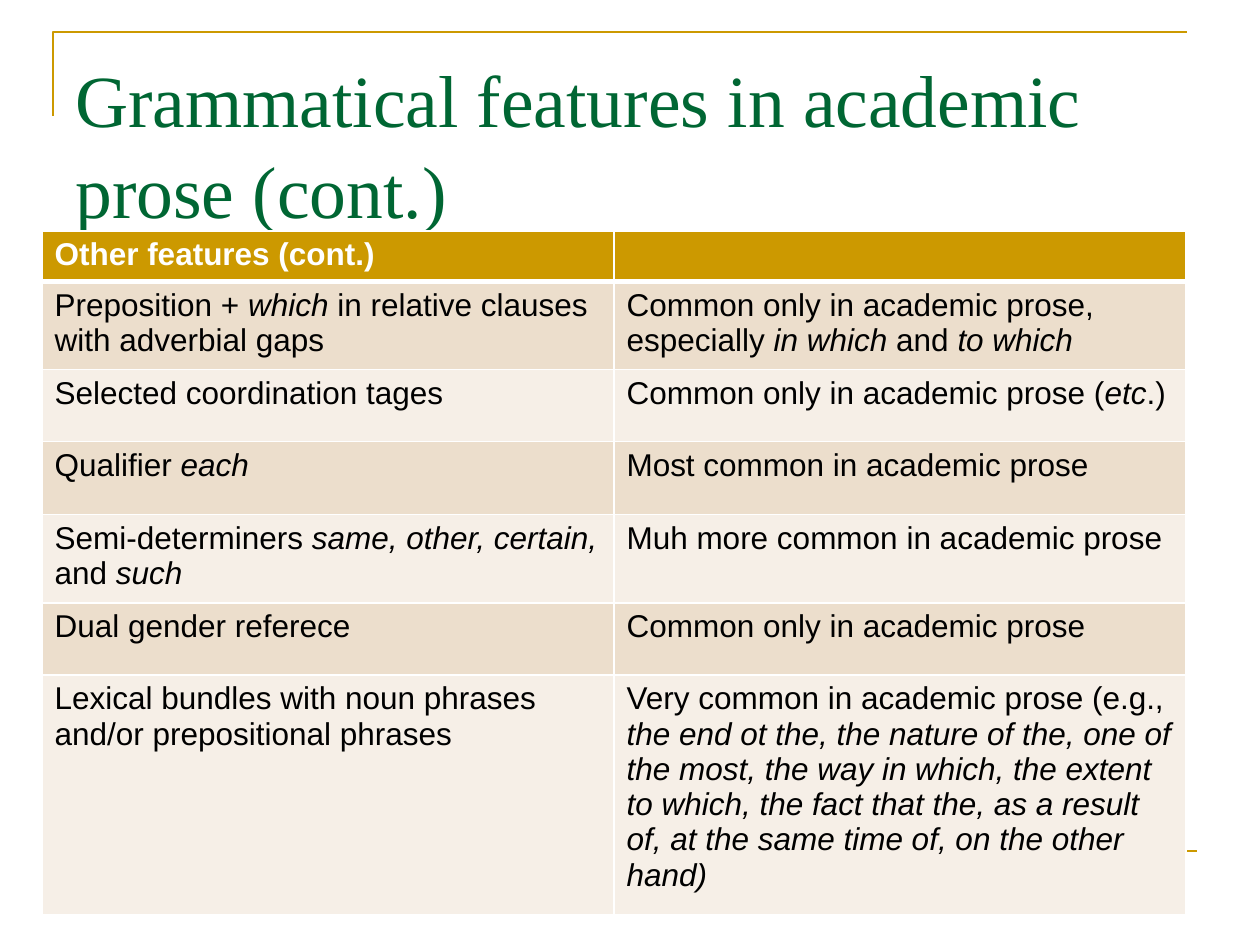
"""Build the slide on grammatical features in academic prose."""
import pptx
import pptx.util
import pptx.dml.color
import pptx.enum.shapes
import pptx.enum.text
import pptx.oxml
import pptx.oxml.ns

PX = 914400 // 126
COLORS = {"gold": "CC9900", "green": "006633", "white": "FFFFFF", "black": "000000",
          "dark_band": "ECDECC", "light_band": "F6EFE7"}
ROWS = [
    (47, "Other features (cont.)", ""),
    (83, "Preposition + *which *in relative clauses with adverbial gaps",
     "Common only in academic prose, especially *in which* and *to which*"),
    (72, "Selected coordination tages", "Common only in academic prose (*etc*.)"),
    (73, "Qualifier *each*", "Most common in academic prose"),
    (83, "Semi-determiners *same, other, certain,* and *such*",
     "Muh more common in academic prose"),
    (72, "Dual gender referece", "Common only in academic prose"),
    (224, "Lexical bundles with noun phrases and/or prepositional phrases",
     "Very common in academic prose (e.g., *the end ot the, the nature of the, one of the most, "
     "the way in which, the extent to which, the fact that the, as a result of, "
     "at the same time of, on the other hand)*"),
]


def rgb(name):
    return pptx.dml.color.RGBColor.from_string(COLORS[name])


def add_border(cell, position, side, points):
    border = pptx.oxml.parse_xml(
        f'<a:{side} {pptx.oxml.ns.nsdecls("a")} w="{points * 12700}"><a:solidFill>'
        f'<a:srgbClr val="{COLORS["white"]}"/></a:solidFill></a:{side}>')
    cell._tc.get_or_add_tcPr().insert(position, border)


deck = pptx.Presentation()
deck.slide_width = 1260 * PX
deck.slide_height = 945 * PX
slide = deck.slides.add_slide(deck.slide_layouts[6])

outline = slide.shapes.build_freeform(53, 116, scale=PX)
outline.add_line_segments([(53, 32), (1187, 32)], close=False)
corner = outline.convert_to_shape()
corner.shadow.inherit = False
corner.fill.background()

footer_rule = slide.shapes.add_connector(
    pptx.enum.shapes.MSO_CONNECTOR.STRAIGHT, 63 * PX, 851 * PX, 1197 * PX, 851 * PX)
footer_rule._element.spPr.append(
    pptx.oxml.parse_xml(f'<a:effectLst {pptx.oxml.ns.nsdecls("a")}/>'))
for rule in (corner, footer_rule):
    rule.line.color.rgb = rgb("gold")
    rule.line.width = pptx.util.Pt(1.5)

title = slide.shapes.add_textbox(63 * PX, 38 * PX, 1134 * PX, 158 * PX).text_frame
title.word_wrap = True
title.margin_top = 12 * PX
title.vertical_anchor = pptx.enum.text.MSO_ANCHOR.TOP
heading = title.paragraphs[0]
heading.text = "Grammatical features in academic prose (cont.)"
heading.line_spacing = 1.04
heading.font.name = "Times New Roman"
heading.font.size = pptx.util.Pt(42)
heading.font.color.rgb = rgb("green")

features = slide.shapes.add_table(
    len(ROWS), 2, 42 * PX, 231 * PX, 1144 * PX, sum(row[0] for row in ROWS) * PX).table
for column in features.columns:
    column.width = 572 * PX

for row_index, (height, *texts) in enumerate(ROWS):
    features.rows[row_index].height = height * PX
    is_header = row_index == 0
    band = "gold" if is_header else "dark_band" if row_index % 2 else "light_band"
    for column_index, text in enumerate(texts):
        cell = features.cell(row_index, column_index)
        cell.fill.solid()
        cell.fill.fore_color.rgb = rgb(band)
        for position, side in enumerate(("lnL", "lnR", "lnT", "lnB")):
            thick = (row_index, side) in ((0, "lnB"), (1, "lnT"))
            add_border(cell, position, side, 3 if thick else 1)
        paragraph = cell.text_frame.paragraphs[0]
        paragraph.font.name = "Arial"
        paragraph.font.size = pptx.util.Pt(18)
        paragraph.font.bold = is_header
        paragraph.font.color.rgb = rgb("white" if is_header else "black")
        for part_index, part in enumerate(text.split("*")):
            if part:
                run = paragraph.add_run()
                run.text = part
                if part_index % 2:
                    run.font.italic = True

deck.save("out.pptx")
